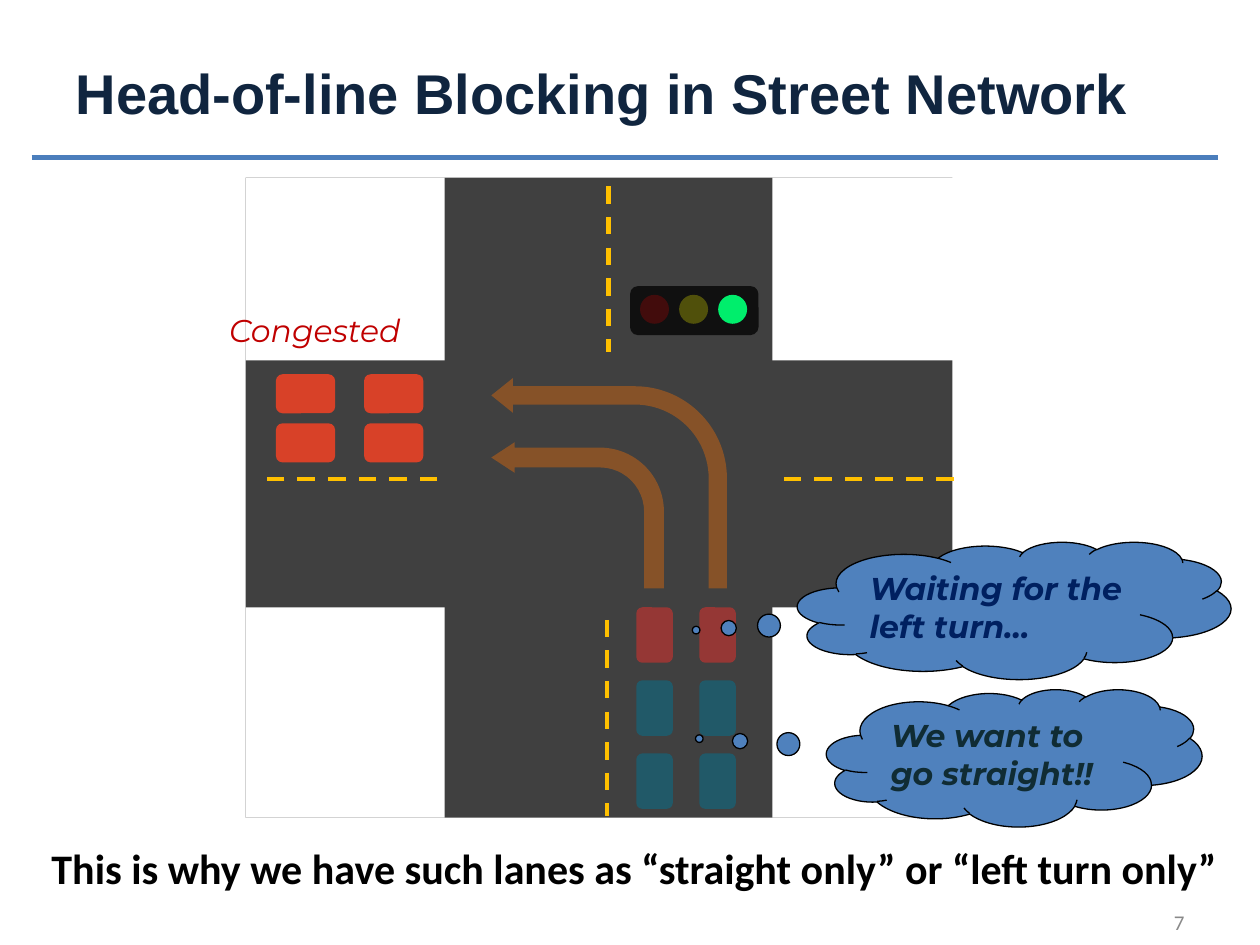
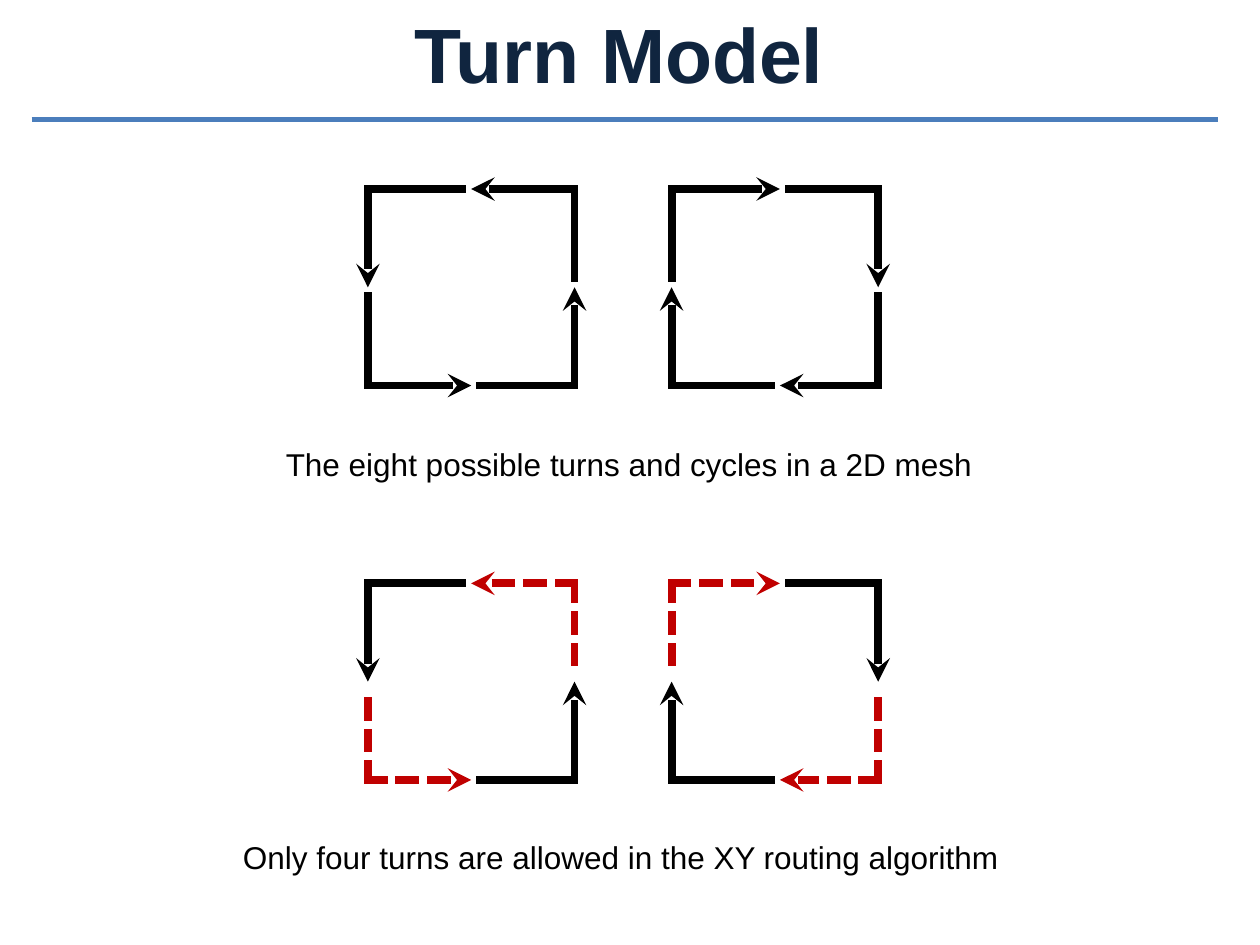
from lxml import etree
from pptx import Presentation
from pptx.dml.color import RGBColor
from pptx.enum import dml, shapes, text
from pptx.oxml.ns import qn
from pptx.util import Inches, Pt

COLORS = {
    "title": "10253F", "rule": "4B7EBC", "number": "898989", "black": "000000",
    "white": "FFFFFF", "road": "404040", "lane": "FFC000", "turning": "953735",
    "straight": "215968", "jam": "D84128", "alert": "C00000", "arrow": "E46C0A",
    "cloud": "4F81BD", "wait": "002060", "go": "102C34",
    "red": "FF0000", "yellow": "FFFF00", "green": "00EE6C",
}
SHAPE = shapes.MSO_SHAPE
DASH = dml.MSO_LINE.DASH
SHORT_DASH = dml.MSO_LINE.SQUARE_DOT
LEFT, CENTER, RIGHT = text.PP_ALIGN.LEFT, text.PP_ALIGN.CENTER, text.PP_ALIGN.RIGHT
TOP, MIDDLE = text.MSO_ANCHOR.TOP, text.MSO_ANCHOR.MIDDLE

# Street slide
STREET_TITLE = "Head-of-line Blocking in Street Network"
STREET_NOTE = "This is why we have such lanes as “straight only” or “left turn only”"
ROAD = (1.95, 1.41, 5.61, 5.08)
BLOCK_COLUMNS = [(1.95, 1.58), (6.13, 1.51)]    # left, width
BLOCK_ROWS = [(1.41, 1.45), (4.82, 1.67)]       # top, height
LANE_LINES = [
    ((4.83, 1.48), (4.83, 2.79)),
    ((7.57, 3.8), (6.13, 3.8)),
    ((3.47, 3.8), (2.03, 3.8)),
    ((4.82, 4.92), (4.82, 6.48)),
]
QUEUE_ROWS = ["turning", "straight", "straight"]
TURN_ARROWS = [
    ((3.9, 3.51, 1.37, 1.16), (0.136, 0.105, 0.16, 0.438)),
    ((3.9, 3, 1.87, 1.67), (0.087, 0.083, 0.103, 0.438)),
]
CLOUDS = [
    ("We want to go straight!!", "go", (6.56, 5.47, 2.98, 1.09), (-0.839, -0.14)),
    ("Waiting for the left turn…", "wait", (6.33, 4.3, 3.44, 1.09), (-0.734, 0.143)),
]
LAMPS = [("red", 21), ("yellow", 27), ("green", 100)]

# Turn model slide
CYCLES = [  # left, right, x of the horizontal arrow tips, clockwise
    (2.92, 4.56, 3.74, False),
    (5.33, 6.97, 6.19, True),
]
CYCLE_HEIGHT, TIP_DROP, TIP_GAP = 1.56, 0.78, 0.07
MESHES = [  # top, only XY routing, caption, caption box
    (1.5, False, "The eight possible turns and cycles in a 2D mesh", (2.17, 3.48, 5.77, 0.4)),
    (4.63, True, "Only four turns are allowed in the XY routing algorithm", (1.83, 6.6, 6.4, 0.4)),
]


def rgb(name):
    return RGBColor.from_string(COLORS[name])


def inches(values):
    return [Inches(v) for v in values]


def write(shape, words, size, font, color, bold=False, italic=False, align=LEFT, anchor=TOP):
    tf = shape.text_frame
    tf.text = words
    tf.vertical_anchor = anchor
    p = tf.paragraphs[0]
    p.alignment = align
    f = p.runs[0].font
    f.size, f.name, f.bold, f.italic = Pt(size), font, bold, italic
    f.color.rgb = rgb(color)


def add_text(s, box, words, size, font, color, wrap=False, **style):
    sp = s.shapes.add_textbox(*inches(box))
    write(sp, words, size, font, color, **style)
    sp.text_frame.word_wrap = wrap
    if not wrap:
        sp.text_frame.auto_size = text.MSO_AUTO_SIZE.SHAPE_TO_FIT_TEXT


def add_shape(s, kind, box, fill, opacity=100, adjust=(), outline=None):
    sp = s.shapes.add_shape(kind, *inches(box))
    sp.shadow.inherit = False
    sp.fill.solid()
    sp.fill.fore_color.rgb = rgb(fill)
    if opacity < 100:
        color = sp.element.spPr.find(qn("a:solidFill"))[0]
        etree.SubElement(color, qn("a:alpha"), val=str(opacity * 1000))
    if outline:
        sp.line.color.rgb = rgb(outline)
        sp.line.width = Pt(0.75)
    else:
        sp.line.fill.background()
    for i, value in enumerate(adjust):
        sp.adjustments[i] = value
    return sp


def add_line(s, start, end, color, width, dash=None, square=False, arrow=False):
    c = s.shapes.add_connector(shapes.MSO_CONNECTOR.STRAIGHT, *inches(start + end))
    c.line.color.rgb = rgb(color)
    c.line.width = Pt(width)
    if dash:
        c.line.dash_style = dash
    ln = c.line._get_or_add_ln()
    if square:
        ln.set("cap", "sq")
    if arrow:
        etree.SubElement(ln, qn("a:tailEnd"), type="stealth")
    etree.SubElement(c.element.spPr, qn("a:effectLst"))


def add_titled_slide(prs, title, top, size, align, anchor, rule_y):
    s = prs.slides.add_slide(prs.slide_layouts[5])
    sp = s.shapes.title
    sp.left, sp.top, sp.width, sp.height = inches((0.5, top, 9, 0.87))
    write(sp, title, size, "Arial", "title", bold=True, align=align, anchor=anchor)
    add_line(s, (0.25, rule_y), (9.67, rule_y), "rule", 3)
    return s


def add_cars(s, left, top, pitch, size, rows):
    """Park two cars side by side for each colour in rows."""
    for row, color in enumerate(rows):
        for col in range(2):
            place = (left + col * pitch[0], top + row * pitch[1])
            add_shape(s, SHAPE.ROUNDED_RECTANGLE, place + size, color)


def build_street(prs):
    s = add_titled_slide(prs, STREET_TITLE, 0.3, 32, LEFT, MIDDLE, 1.25)
    add_text(s, (7.17, 7.06, 2.33, 0.52), "7", 12, "Calibri", "number",
             wrap=True, align=RIGHT, anchor=MIDDLE)
    add_text(s, (0.31, 6.64, 9.55, 0.51), STREET_NOTE, 24, "Calibri", "black", bold=True)

    add_shape(s, SHAPE.RECTANGLE, ROAD, "road")
    for left, width in BLOCK_COLUMNS:
        for top, height in BLOCK_ROWS:
            add_shape(s, SHAPE.RECTANGLE, (left, top, width, height), "white")
    for start, end in LANE_LINES:
        add_line(s, start, end, "lane", 2.5, DASH)

    add_cars(s, 5.05, 4.82, (0.5, 0.58), (0.29, 0.44), QUEUE_ROWS)
    add_cars(s, 2.19, 2.97, (0.7, 0.39), (0.47, 0.31), ["jam", "jam"])
    for box, adjust in TURN_ARROWS:
        sp = add_shape(s, SHAPE.BENT_ARROW, box, "arrow", 43, adjust)
        sp.element.spPr.xfrm.set("flipH", "1")
    for words, color, box, tail in CLOUDS:
        sp = add_shape(s, SHAPE.CLOUD_CALLOUT, box, "cloud", adjust=tail, outline="black")
        write(sp, words, 18, "Montserrat", color, bold=True, italic=True)

    add_shape(s, SHAPE.ROUNDED_RECTANGLE, (5, 2.27, 1.02, 0.39), "black", 75)
    for i, (color, opacity) in enumerate(LAMPS):
        add_shape(s, SHAPE.OVAL, (5.08 + i * 0.31, 2.34, 0.23, 0.23), color, opacity)
    add_text(s, (1.72, 2.42, 1.67, 0.4), "Congested", 18, "Montserrat", "alert", italic=True)


def add_cycle(s, left, right, tip_x, clockwise, top, xy_only):
    """Draw four turns; each has one arrow leg and one plain leg that stops short."""
    bottom = top + CYCLE_HEIGHT
    tip_y = top + TIP_DROP
    for x in (left, right):
        for y in (top, bottom):
            ends_horizontal = ((x == left) == (y == top)) == clockwise
            banned = xy_only and ends_horizontal
            style = dict(color="alert" if banned else "black", width=4.5,
                         dash=SHORT_DASH if banned else None, square=True)
            gap_x = gap_y = 0
            if ends_horizontal:
                gap_y = -TIP_GAP if y == top else TIP_GAP
            else:
                gap_x = -TIP_GAP if x == left else TIP_GAP
            add_line(s, (x, y), (tip_x + gap_x, y), arrow=ends_horizontal, **style)
            add_line(s, (x, y), (x, tip_y + gap_y), arrow=not ends_horizontal, **style)


def build_turn_model(prs):
    s = add_titled_slide(prs, "Turn Model ", 0, 44, CENTER, TOP, 0.95)
    for top, xy_only, caption, box in MESHES:
        for cycle in CYCLES:
            add_cycle(s, *cycle, top, xy_only)
        add_text(s, box, caption, 18, "Arial", "black")


def main():
    prs = Presentation()
    prs.slide_width, prs.slide_height = Inches(10), Inches(7.5)
    build_street(prs)
    build_turn_model(prs)
    prs.save("out.pptx")


if __name__ == "__main__":
    main()
